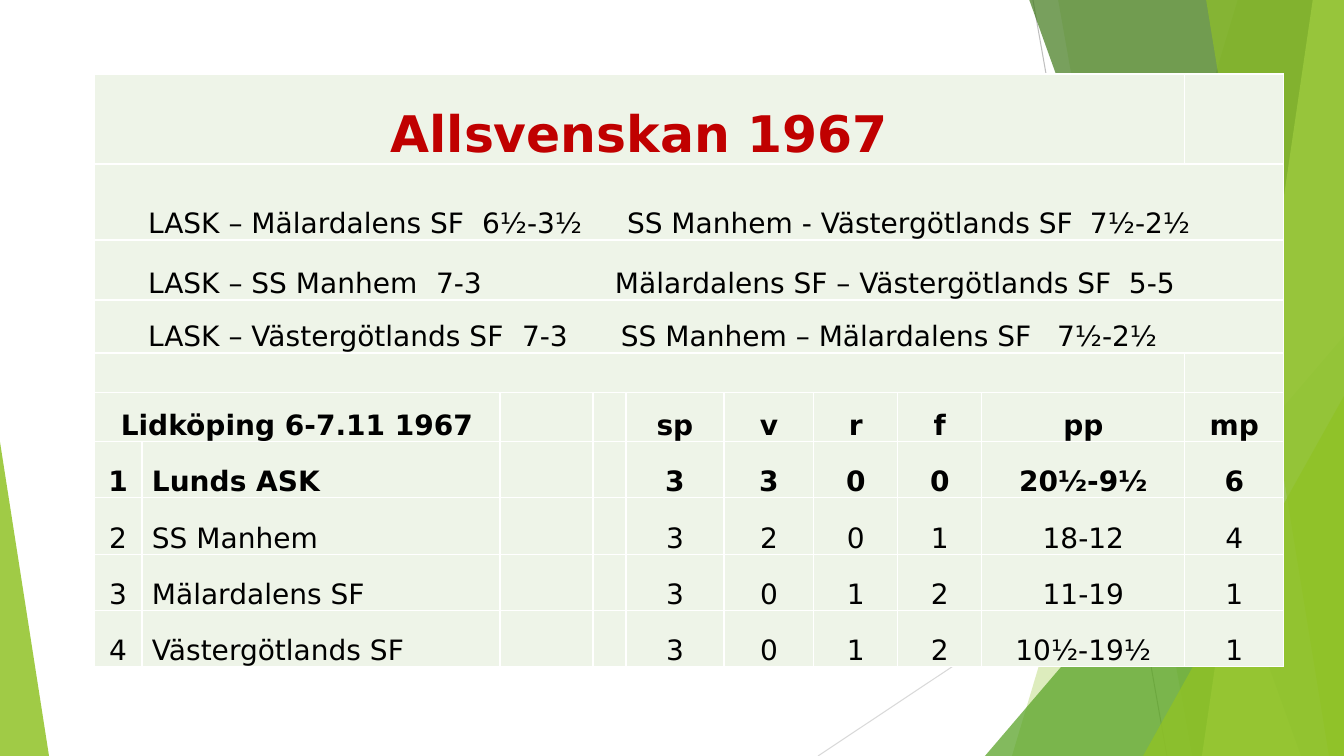
from itertools import pairwise

from lxml.etree import SubElement
from pptx import Presentation
from pptx.dml.color import RGBColor
from pptx.enum.shapes import MSO_CONNECTOR as Connector, MSO_SHAPE as Shape
from pptx.enum.text import MSO_ANCHOR as Anchor, PP_ALIGN as Align
from pptx.oxml.ns import qn
from pptx.util import Emu, Pt

THEME = {
    "font": "DejaVu Sans", "title_size": 36, "body_size": 20,
    "title": "C00000", "text": "000000", "cell": "EEF4E8", "border": "FFFFFF",
    "line_dark": "BFBFBF", "line_light": "D9D9D9",
    "lime": "90C226", "green": "54A021", "forest": "3F7819", "pale": "C0E474",
}
WIDTH, HEIGHT = 1344, 756


def px(length):
    return Emu(round(length * 914400 / 100.8))


def write(cell, text, size=THEME["body_size"], color=THEME["text"], bold=False,
          align=Align.CENTER, spacing=None, tabs=()):
    para = cell.text_frame.paragraphs[0]
    para.alignment = align
    if spacing:
        para.line_spacing = spacing
    if tabs:
        tab_list = SubElement(para._p.get_or_add_pPr(), qn("a:tabLst"))
        for stop in tabs:
            SubElement(tab_list, qn("a:tab"), pos=str(px(stop)), algn="l")
    span = para.add_run()
    span.text = text
    span.font.name = THEME["font"]
    span.font.size = Pt(size)
    span.font.bold = bold
    span.font.color.rgb = RGBColor.from_string(color)


deck = Presentation()
deck.slide_width, deck.slide_height = px(WIDTH), px(HEIGHT)
page = deck.slides.add_slide(deck.slide_layouts[6])

# Thin lines behind the facets
for x1, y1, x2, y2, color in [
    (1033, 0, 1167, HEIGHT, "line_dark"),
    (WIDTH, 406, 818, HEIGHT, "line_light"),
]:
    line = page.shapes.add_connector(Connector.STRAIGHT, px(x1), px(y1), px(x2), px(y2))
    line.line.color.rgb = RGBColor.from_string(THEME[color])
    line.line.width = Pt(0.75)
    SubElement(line._element.spPr, qn("a:effectLst"))

# Facets: a panel is (top x, bottom x) up to the right edge,
# a triangle is (left, top, width, apex) down to the bottom edge
facets = [
    ((1238, 1012), "lime", 30),
    ((1058, 1192), "lime", 20),
    ((985, 336, 359, 1), "green", 72),
    ((1029, 1301), "forest", 70),
    ((1313, 1202), "pale", 70),
    ((1206, 1329), "lime", 65),
    ((1143, 396, 201, 1), "lime", 80),
    ((0, 442, 49, 0), "lime", 85),
]
for outline, color, opacity in facets:
    if len(outline) == 2:
        top_x, bottom_x = outline
        builder = page.shapes.build_freeform(px(top_x), px(-1))
        builder.add_line_segments([(px(WIDTH), px(-1)), (px(WIDTH), px(HEIGHT)),
                                   (px(bottom_x), px(HEIGHT))])
        facet = builder.convert_to_shape()
    else:
        left, top, width, apex = outline
        facet = page.shapes.add_shape(Shape.ISOSCELES_TRIANGLE, px(left), px(top),
                                      px(width), px(HEIGHT - top))
        facet.adjustments[0] = apex
    facet.shadow.inherit = False
    facet.line.fill.background()
    facet.fill.solid()
    facet.fill.fore_color.rgb = RGBColor.from_string(THEME[color])
    tint = facet._element.spPr.find(qn("a:solidFill"))[0]
    SubElement(tint, qn("a:alpha"), val=str(opacity * 1000))

# Table grid
column_edges = [94, 142, 500, 593, 626, 724, 814, 898, 982, 1185, 1284]
row_edges = [74, 164, 240, 300, 353, 393, 442, 498, 555, 611, 667]
left, top = column_edges[0], row_edges[0]
table = page.shapes.add_table(
    len(row_edges) - 1, len(column_edges) - 1, px(left), px(top),
    px(column_edges[-1] - left), px(row_edges[-1] - top)).table
table.first_row = table.horz_banding = False
for column, (start, end) in zip(table.columns, pairwise(column_edges)):
    column.width = px(end - start)
for row, (start, end) in zip(table.rows, pairwise(row_edges)):
    row.height = px(end - start)

# Cell borders, fills and margins
for cell in table.iter_cells():
    cell.vertical_anchor = Anchor.BOTTOM
    cell.margin_left = cell.margin_right = cell.margin_top = px(1)
    cell.margin_bottom = 0
    properties = cell._tc.get_or_add_tcPr()
    for side in ("lnL", "lnR", "lnT", "lnB"):
        border = SubElement(properties, qn(f"a:{side}"), w=str(Pt(1)))
        paint = SubElement(border, qn("a:solidFill"))
        SubElement(paint, qn("a:srgbClr"), val=THEME["border"])
    cell.fill.solid()
    cell.fill.fore_color.rgb = RGBColor.from_string(THEME["cell"])

# Merged cells: (row, last column)
for row, last in [(0, 8), (1, 9), (2, 9), (3, 9), (4, 8), (5, 1)]:
    table.cell(row, 0).merge(table.cell(row, last))

# Heading
write(table.cell(0, 0), "Allsvenskan 1967", size=THEME["title_size"],
      color=THEME["title"], bold=True)

# Match results, two matches a row, with tab stops for teams and scores
matches = [
    ("LASK – Mälardalens SF", "6½-3½", "SS Manhem - Västergötlands SF", "7½-2½",
     (53, 387, 532, 995), None),
    ("LASK – SS Manhem", "7-3", "Mälardalens SF – Västergötlands SF", "5-5",
     (53, 341, 520, 1034), 1.1),
    ("LASK – Västergötlands SF", "7-3", "SS Manhem – Mälardalens SF", "7½-2½",
     (53, 427, 526, 962), None),
]
for row, (*parts, tabs, spacing) in enumerate(matches, start=1):
    write(table.cell(row, 0), "\t" + "\t".join(parts), align=Align.LEFT,
          spacing=spacing, tabs=tabs)

# Standings
score_columns = range(4, 10)
write(table.cell(5, 0), "Lidköping 6-7.11 1967", bold=True)
for column, label in zip(score_columns, ("sp", "v", "r", "f", "pp", "mp")):
    write(table.cell(5, column), label, bold=True)

standings = [
    ("Lunds ASK", "3", "3", "0", "0", "20½-9½", "6"),
    ("SS Manhem", "3", "2", "0", "1", "18-12", "4"),
    ("Mälardalens SF", "3", "0", "1", "2", "11-19", "1"),
    ("Västergötlands SF", "3", "0", "1", "2", "10½-19½", "1"),
]
for place, (team, *scores) in enumerate(standings, start=1):
    row, winner = place + 5, place == 1
    write(table.cell(row, 0), str(place), bold=winner)
    team_cell = table.cell(row, 1)
    team_cell.margin_left = px(10)
    write(team_cell, team, bold=winner, align=Align.LEFT)
    for column, score in zip(score_columns, scores):
        write(table.cell(row, column), score, bold=winner)

deck.save("out.pptx")
